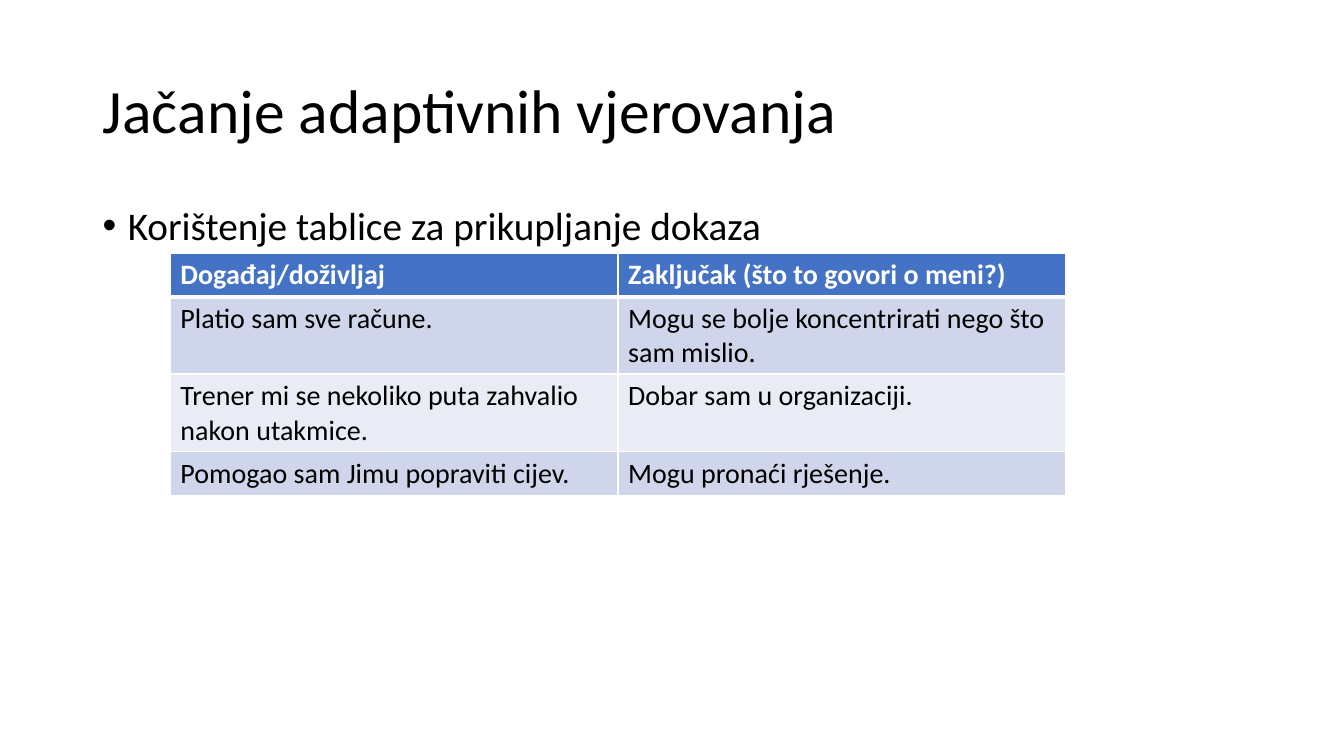
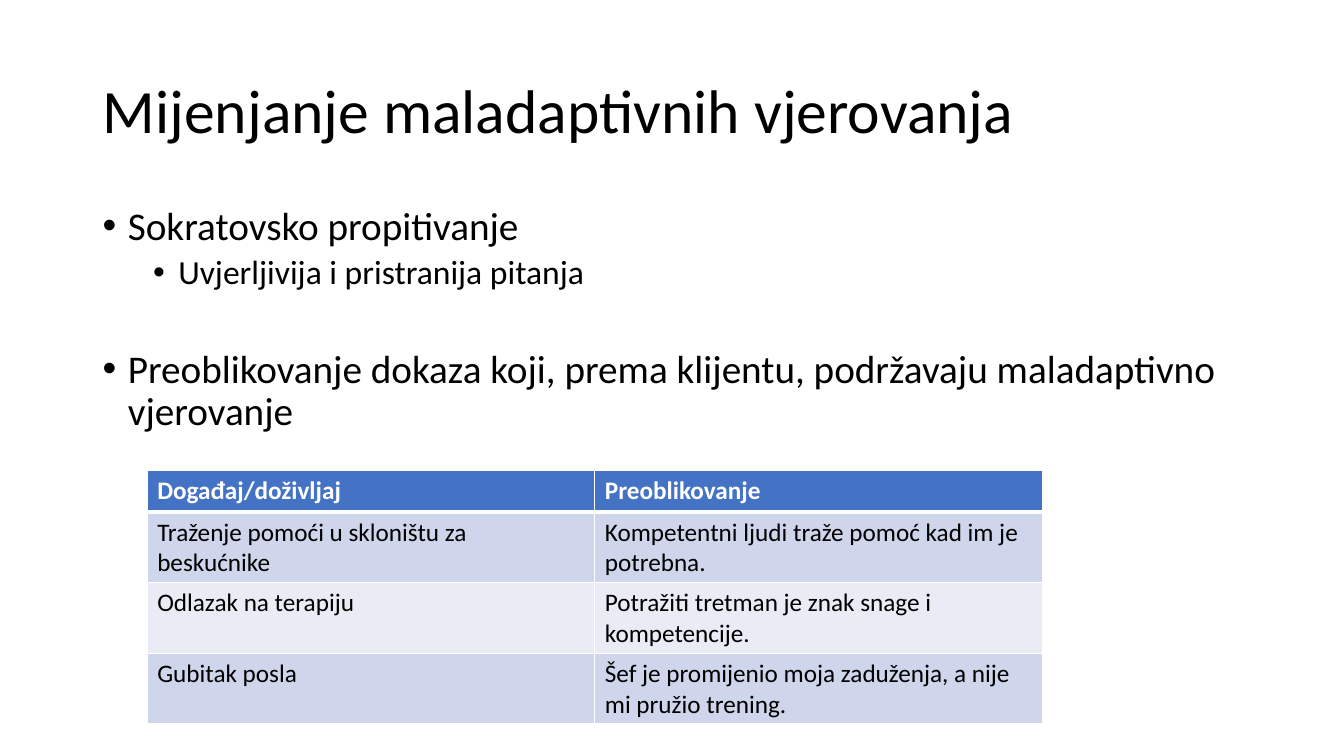
"""Build two slides on strengthening and changing beliefs, each with bullets and a table."""
from lxml.etree import SubElement
from pptx import Presentation
from pptx.dml.color import RGBColor
from pptx.enum.text import MSO_ANCHOR, MSO_AUTO_SIZE, PP_ALIGN
from pptx.oxml.ns import qn
from pptx.util import Inches, Pt

FONT = "Calibri"
COLOURS = {
    "text": "000000",
    "white": "FFFFFF",
    "header": "4472C4",
    "odd": "CFD5EA",
    "even": "E9EBF5",
}
LEFT, WIDTH = Inches(0.92), Inches(11.5)
BULLET_SIZES = [28, 24]

PAGES = [
    {
        "title": "Jačanje adaptivnih vjerovanja",
        "bullets": [("Korištenje tablice za prikupljanje dokaza", 0, 10)],
        "corner": (1.69, 2.51),
        "size": 20,
        "rows": [
            ("Događaj/doživljaj", "Zaključak (što to govori o meni?)"),
            ("Platio sam sve račune.", "Mogu se bolje koncentrirati nego što sam mislio."),
            ("Trener mi se nekoliko puta zahvalio nakon utakmice.", "Dobar sam u organizaciji."),
            ("Pomogao sam Jimu popraviti cijev.", "Mogu pronaći rješenje."),
        ],
    },
    {
        "title": "Mijenjanje maladaptivnih vjerovanja",
        "bullets": [
            ("Sokratovsko propitivanje", 0, 10),
            ("Uvjerljivija i pristranija pitanja", 1, 5),
            ("Preoblikovanje dokaza koji, prema klijentu, podržavaju maladaptivno vjerovanje", 0, 41),
        ],
        "corner": (1.46, 4.67),
        "size": 18,
        "rows": [
            ("Događaj/doživljaj", "Preoblikovanje"),
            ("Traženje pomoći u skloništu za beskućnike", "Kompetentni ljudi traže pomoć kad im je potrebna."),
            ("Odlazak na terapiju", "Potražiti tretman je znak snage i kompetencije."),
            ("Gubitak posla", "Šef je promijenio moja zaduženja, a nije mi pružio trening."),
        ],
    },
]


def write(para, text, size, colour="text", bold=False, spacing=None, before=None, level=None):
    para.alignment = PP_ALIGN.LEFT
    if spacing is not None:
        para.line_spacing = spacing
    if before is not None:
        para.space_before = Pt(before)
    if level is not None:
        para.level = level
        properties = para._p.get_or_add_pPr()
        properties.set("marL", str(Inches(0.25 + 0.5 * level)))
        properties.set("indent", str(Inches(-0.25)))
        SubElement(properties, qn("a:buFont"), typeface="Arial")
        SubElement(properties, qn("a:buChar"), char="•")
    span = para.add_run()
    span.text = text
    span.font.name = FONT
    span.font.size = Pt(size)
    span.font.bold = bold
    span.font.color.rgb = RGBColor.from_string(COLOURS[colour])


def style_cell(cell, fill, bottom_width):
    properties = cell._tc.get_or_add_tcPr()
    for side, width in (("lnL", 1), ("lnR", 1), ("lnT", 1), ("lnB", bottom_width)):
        line = SubElement(properties, qn(f"a:{side}"), w=str(Pt(width)))
        line_fill = SubElement(line, qn("a:solidFill"))
        SubElement(line_fill, qn("a:srgbClr"), val=COLOURS["white"])
    cell.fill.solid()
    cell.fill.fore_color.rgb = RGBColor.from_string(COLOURS[fill])


deck = Presentation()
deck.slide_width, deck.slide_height = Inches(13.33), Inches(7.5)

for content in PAGES:
    page = deck.slides.add_slide(deck.slide_layouts[5])

    title = page.shapes.title
    title.left, title.top, title.width, title.height = LEFT, Inches(0.4), WIDTH, Inches(1.45)
    title.text_frame.auto_size = MSO_AUTO_SIZE.NONE
    title.text_frame.vertical_anchor = MSO_ANCHOR.MIDDLE
    write(title.text_frame.paragraphs[0], content["title"], 44, spacing=0.9)

    box = page.shapes.add_textbox(LEFT, Inches(2), WIDTH, Inches(4.76))
    frame = box.text_frame
    frame.word_wrap = True
    for index, (text, level, before) in enumerate(content["bullets"]):
        para = frame.add_paragraph() if index else frame.paragraphs[0]
        write(para, text, BULLET_SIZES[level], spacing=0.9, before=before, level=level)

    rows = content["rows"]
    left, top = content["corner"]
    table = page.shapes.add_table(
        len(rows), 2, Inches(left), Inches(top), Inches(8.88), Inches(0.41 * len(rows))
    ).table
    for row_index, row in enumerate(rows):
        header = row_index == 0
        fill = "header" if header else ("even", "odd")[row_index % 2]
        for column_index, text in enumerate(row):
            cell = table.cell(row_index, column_index)
            style_cell(cell, fill, 3 if header else 1)
            write(
                cell.text_frame.paragraphs[0], text, content["size"],
                colour="white" if header else "text", bold=header,
            )

deck.save("out.pptx")
